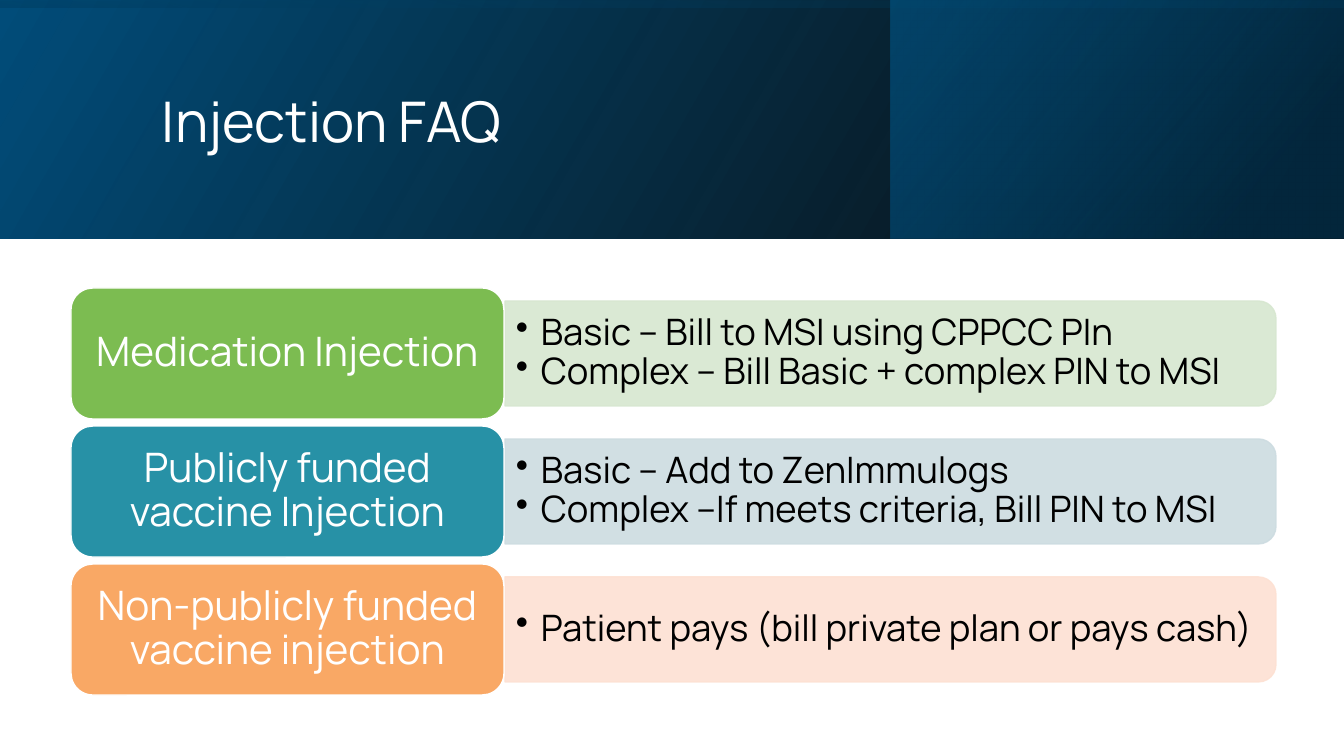
from dataclasses import dataclass
from typing import Any

from lxml.etree import SubElement
from pptx import Presentation
from pptx.dml.color import RGBColor
from pptx.enum.shapes import MSO_SHAPE as Preset
from pptx.enum.text import MSO_ANCHOR as Anchor, PP_ALIGN as Align
from pptx.oxml.ns import qn
from pptx.util import Emu, Pt

EMU_PER_PX = 914400 / 100.8
SLIDE_WIDTH, SLIDE_HEIGHT = 1344, 756
HEADER_HEIGHT = 239
ROW_TOP, ROW_PITCH = 288, 138
CARD_LEFT, CARD_WIDTH, CARD_HEIGHT = 71, 433, 131
BAR_LEFT, BAR_WIDTH, BAR_HEIGHT, BAR_OFFSET = 505, 771, 105, 13
DETAIL_WIDTH, DETAIL_HEIGHT, DETAIL_OFFSET = 766, 95, 18
BULLET_INDENT = 25
FONT_NAME = "Manrope"


@dataclass(frozen=True)
class Box:
    left: int
    top: int
    width: int
    height: int


@dataclass(frozen=True)
class Stop:
    position: int
    color: str
    opacity: int


@dataclass(frozen=True)
class Band:
    box: Box
    rotation: int
    angle: int
    stops: tuple[Stop, ...]


@dataclass(frozen=True)
class Row:
    label: str
    card_color: str
    bar_color: str
    details: tuple[str, ...]


BANDS = (
    Band(Box(0, 0, SLIDE_WIDTH, HEADER_HEIGHT), 0, 330,
         (Stop(0, "000000", 96), Stop(100, "004D7A", 100))),
    Band(Box(891, 0, 453, HEADER_HEIGHT), 0, 320,
         (Stop(19, "003351", 68), Stop(100, "0066A2", 48))),
    Band(Box(0, 0, SLIDE_WIDTH, HEADER_HEIGHT), 270, 350,
         (Stop(23, "004D7A", 16), Stop(99, "000000", 45))),
)

ROWS = (
    Row("Medication Injection", "7CBC51", "D7E7D0",
        ("Basic – Bill to MSI using CPPCC PIn",
         "Complex – Bill Basic + complex PIN to MSI")),
    Row("Publicly funded vaccine Injection", "2791A6", "CDDCE1",
        ("Basic – Add to ZenImmulogs",
         "Complex –If meets criteria, Bill PIN to MSI")),
    Row("Non-publicly funded vaccine injection", "F9A865", "FDE1D3",
        ("Patient pays (bill private plan or pays cash)",)),
)


def px(length: int) -> Emu:
    return Emu(round(length * EMU_PER_PX))


def rgb(color: str) -> RGBColor:
    return RGBColor.from_string(color)


def corners(box: Box) -> tuple[Emu, ...]:
    return px(box.left), px(box.top), px(box.width), px(box.height)


def apply(target: Any, values: dict[str, Any]) -> None:
    for name, value in values.items():
        setattr(target, name, value)


def add_preset(slide: Any, preset: Any, box: Box, rotation: int = 0) -> Any:
    if rotation in (90, 270):
        shift = (box.width - box.height) // 2
        box = Box(box.left + shift, box.top - shift, box.height, box.width)
    shape = slide.shapes.add_shape(preset, *corners(box))
    shape.rotation = rotation
    shape.shadow.inherit = False
    return shape


def paint(shape: Any, fill: str, line: str) -> None:
    shape.fill.solid()
    shape.fill.fore_color.rgb = rgb(fill)
    shape.line.color.rgb = rgb(line)
    shape.line.width = Pt(1)


def set_opacity(color_element: Any, opacity: int) -> None:
    SubElement(color_element, qn("a:alpha"), val=str(opacity * 1000))


def write_text(shape: Any, lines: tuple[str, ...], size: int, color: str,
               align: Any, insets: tuple[int, int]) -> None:
    horizontal, vertical = map(px, insets)
    frame = shape.text_frame
    apply(frame, {"word_wrap": True, "vertical_anchor": Anchor.MIDDLE,
                  "margin_left": horizontal, "margin_right": horizontal,
                  "margin_top": vertical, "margin_bottom": vertical})
    frame.text = "\n".join(lines)
    for paragraph in frame.paragraphs:
        apply(paragraph, {"alignment": align, "line_spacing": 0.9})
        apply(paragraph.font, {"name": FONT_NAME, "size": Pt(size)})
        paragraph.font.color.rgb = rgb(color)
        for run in paragraph.runs:
            apply(run.font, {"name": FONT_NAME, "size": Pt(size)})
            run.font.color.rgb = rgb(color)


def add_bullets(shape: Any) -> None:
    for paragraph in shape.text_frame.paragraphs:
        paragraph.level = 1
        properties = paragraph._p.get_or_add_pPr()
        properties.set("marL", str(px(BULLET_INDENT)))
        properties.set("indent", str(-px(BULLET_INDENT)))
        SubElement(properties, qn("a:buChar"), char="•")


def draw_band(slide: Any, band: Band) -> None:
    shape = add_preset(slide, Preset.RECTANGLE, band.box, band.rotation)
    shape.line.fill.background()
    shape.fill.gradient()
    properties = shape.element.spPr
    properties.find(qn("a:xfrm")).set("flipH", "1")
    gradient = properties.find(qn("a:gradFill"))
    for child in list(gradient):
        gradient.remove(child)
    stop_list = SubElement(gradient, qn("a:gsLst"))
    for stop in band.stops:
        stop_element = SubElement(stop_list, qn("a:gs"), pos=str(stop.position * 1000))
        color_element = SubElement(stop_element, qn("a:srgbClr"), val=stop.color)
        set_opacity(color_element, stop.opacity)
    SubElement(gradient, qn("a:lin"), ang=str(band.angle * 60000), scaled="0")


def draw_title(slide: Any) -> None:
    title = slide.shapes.title
    left, top, width, height = corners(Box(152, 38, 1072, 173))
    apply(title, {"left": left, "top": top, "width": width, "height": height})
    write_text(title, ("Injection FAQ",), 40, "FFFFFF", Align.LEFT, (10, 5))
    title.element.getparent().append(title.element)


def draw_row(slide: Any, row: Row, top: int) -> None:
    bar = add_preset(slide, Preset.ROUND_2_SAME_RECTANGLE,
                     Box(BAR_LEFT, top + BAR_OFFSET, BAR_WIDTH, BAR_HEIGHT), 90)
    paint(bar, row.bar_color, row.bar_color)
    for color_element in list(bar.element.spPr.iter(qn("a:srgbClr"))):
        set_opacity(color_element, 90)

    details = slide.shapes.add_textbox(
        *corners(Box(BAR_LEFT, top + DETAIL_OFFSET, DETAIL_WIDTH, DETAIL_HEIGHT)))
    write_text(details, row.details, 26, "000000", Align.LEFT, (11, 5))
    add_bullets(details)

    card = add_preset(slide, Preset.ROUNDED_RECTANGLE,
                      Box(CARD_LEFT, top, CARD_WIDTH, CARD_HEIGHT))
    paint(card, row.card_color, "FFFFFF")
    write_text(card, (row.label,), 29, "FFFFFF", Align.CENTER, (12, 6))


def main() -> None:
    presentation = Presentation()
    apply(presentation, {"slide_width": px(SLIDE_WIDTH), "slide_height": px(SLIDE_HEIGHT)})
    slide = presentation.slides.add_slide(presentation.slide_layouts[5])
    for band in BANDS:
        draw_band(slide, band)
    draw_title(slide)
    for index, row in enumerate(ROWS):
        draw_row(slide, row, ROW_TOP + index * ROW_PITCH)
    presentation.save("out.pptx")


if __name__ == "__main__":
    main()
